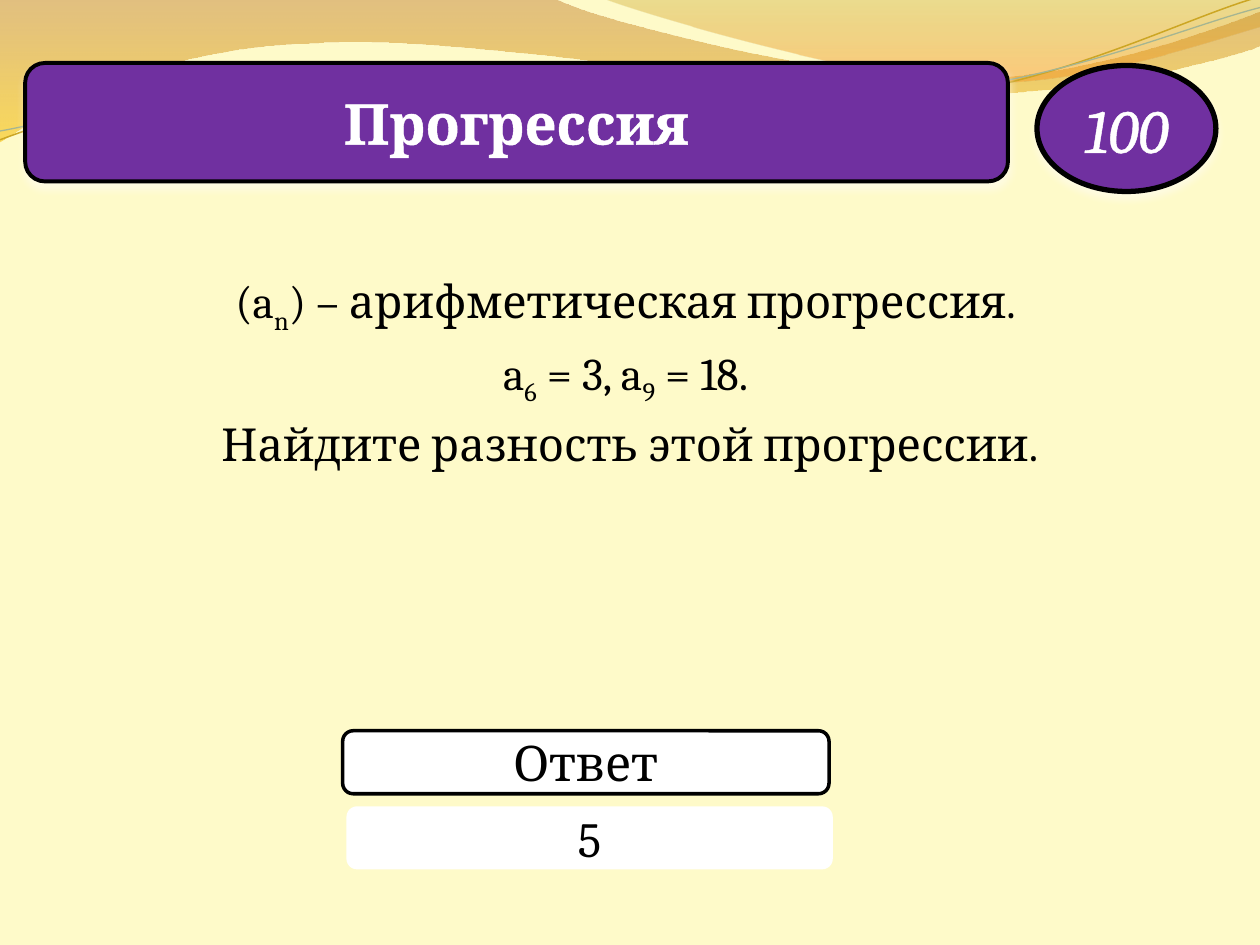
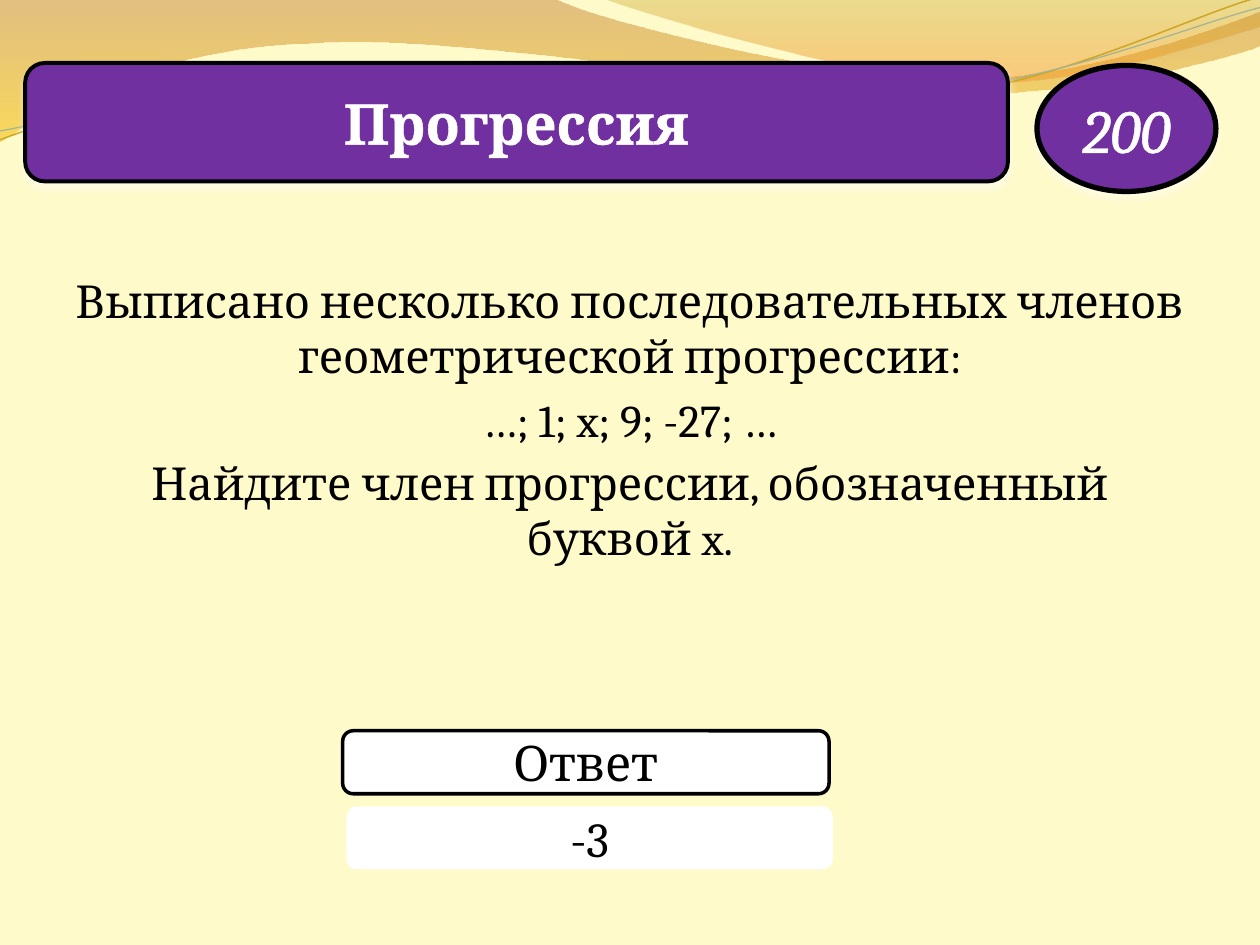
from dataclasses import dataclass
from typing import NamedTuple

from lxml.etree import SubElement
from pptx import Presentation
from pptx.dml.color import RGBColor
from pptx.enum.shapes import MSO_SHAPE
from pptx.enum.text import MSO_ANCHOR, MSO_AUTO_SIZE, PP_ALIGN
from pptx.oxml.ns import qn
from pptx.util import Inches, Pt

FONT = "Cambria"
HUES = {
    "page": "FEFAC9", "band": "7030A0", "white": "FFFFFF", "black": "000000",
    "brown": "C07A28", "gold": "F7BF00", "olive": "C09709",
    "orange": "F59320", "straw": "CCA624", "sage": "A5B592",
}


class Box(NamedTuple):
    left: float
    top: float
    width: float
    height: float

    def sizes(self) -> list:
        return [Inches(side) for side in self]


class Stop(NamedTuple):
    place: float
    hue: str
    alpha: int


@dataclass
class Wave:
    """Each leg is a line end (2 numbers) or a cubic curve (6 numbers)."""
    start: tuple
    legs: list
    stops: tuple = ()
    line: str = ""
    width: float = 0


@dataclass
class Panel:
    """A shape with one line of text."""
    kind: MSO_SHAPE
    box: Box
    size: float
    fill: str = "white"
    line: float = 0
    hue: str = "black"
    bold: bool = False
    slant: bool = False
    edge: float = 0
    shade: bool = False


@dataclass
class Task:
    """Odd parts of a row split at | are subscripts."""
    points: str
    rows: list
    reply: str


BODY = Box(0.5, 2.12, 9, 4.8)
ROUND = MSO_SHAPE.ROUNDED_RECTANGLE
REPLY = Panel(ROUND, Box(2.75, 6.4, 3.86, 0.5), 28)
BAND = Panel(ROUND, Box(0.2, 0.5, 7.8, 0.94), 32, "band", 2.25, "white",
             bold=True, edge=1.45, shade=True)
BADGE = Panel(MSO_SHAPE.OVAL, Box(8.23, 0.52, 1.42, 1), 35, "band", 3,
              "white", slant=True, edge=0.75, shade=True)
BUTTON = Panel(ROUND, Box(2.72, 5.8, 3.86, 0.5), 28, line=2)

WAVES = [
    Wave((0, 0), [
        (4.4, -0.01),
        (4.76, 0.17, 6.64, 0.63, 7.58, 0.63),
        (8.53, 0.63, 9.58, 0.26, 10, 0.09),
        (10.01, 0.36),
        (9.83, 0.44, 8.7, 0.76, 7.46, 0.75),
        (6.22, 0.75, 3.82, 0.28, 2.57, 0.34),
        (1.29, 0.36, 0.46, 0.83, -0.01, 1.13),
        (0, 0),
    ], stops=(Stop(0, "brown", 45), Stop(1, "gold", 55))),
    Wave((4.79, -0.01), [
        (5.09, 0.11, 6.82, 0.62, 7.69, 0.65),
        (8.56, 0.69, 9.61, 0.32, 10, 0.21),
        (10, 0),
        (4.79, -0.01),
    ], stops=(Stop(0, "olive", 30), Stop(0.8, "orange", 45))),
    Wave((0, 1.11), [
        (0.48, 0.93, 1.58, 0.57, 2.77, 0.52),
        (3.95, 0.47, 5.93, 0.89, 7.13, 0.8),
        (8.33, 0.71, 9.38, 0.15, 9.98, -0.02),
    ], line="straw", width=0.85),
    Wave((0, 1.04), [
        (0.47, 0.96, 1.64, 0.61, 2.83, 0.56),
        (4.03, 0.51, 5.97, 0.84, 7.17, 0.75),
        (8.36, 0.67, 9.41, 0.21, 10, 0.06),
    ], line="sage", width=0.75),
]

TASKS = [
    Task("100", [
        "(a|n|) – арифметическая прогрессия. ",
        "a|6| = 3, a|9| = 18. ",
        "Найдите разность этой прогрессии.",
    ], "5"),
    Task("200", [
        "Выписано несколько последовательных членов геометрической прогрессии:",
        "…; 1; x; 9; -27; …",
        "Найдите член прогрессии, обозначенный буквой x.",
    ], "-3"),
]


def tint(hue: str) -> RGBColor:
    return RGBColor.from_string(HUES[hue])


def bend(shape, legs: list) -> None:
    """Join each three straight steps of a cubic leg into one curve."""
    steps = list(shape.element.iter(qn("a:lnTo")))
    for leg in legs:
        count = len(leg) // 2
        group, steps = steps[:count], steps[count:]
        if count == 3:
            curve = group[0].makeelement(qn("a:cubicBezTo"))
            group[0].addprevious(curve)
            for step in group:
                curve.append(step[0])
                step.getparent().remove(step)


def draw_wave(slide, wave: Wave):
    dots = [(Inches(x), Inches(y)) for leg in wave.legs
            for x, y in zip(leg[::2], leg[1::2])]
    pen = slide.shapes.build_freeform(*[Inches(n) for n in wave.start])
    pen.add_line_segments(dots, close=bool(wave.stops))
    shape = pen.convert_to_shape()
    bend(shape, wave.legs)
    shape.shadow.inherit = False
    if wave.stops:
        shape.line.fill.background()
        shape.fill.gradient()
        shape.fill.gradient_angle = 270
        for mark, stop in zip(shape.fill.gradient_stops, wave.stops):
            mark.position = stop.place
            mark.color.rgb = tint(stop.hue)
        for hue, stop in zip(shape.element.iter(qn("a:srgbClr")), wave.stops):
            SubElement(hue, qn("a:alpha"), val=str(stop.alpha * 1000))
    else:
        shape.fill.background()
        shape.line.color.rgb = tint(wave.line)
        shape.line.width = Pt(wave.width)
    return shape


def style(para, size: float, hue: str = "black", bold: bool = False,
          slant: bool = False) -> None:
    para.alignment = PP_ALIGN.CENTER
    font = para.font
    font.name, font.size = FONT, Pt(size)
    font.bold, font.italic = bold, slant
    font.color.rgb = tint(hue)


def cast(shape) -> None:
    """Add a soft light shadow below a shape."""
    glow = SubElement(shape.element.spPr.find(qn("a:effectLst")),
                      qn("a:outerShdw"), blurRad=str(Pt(4.5)),
                      dist=str(Pt(3)), dir="5400000", rotWithShape="0")
    hue = SubElement(glow, qn("a:srgbClr"), val=HUES["white"])
    SubElement(hue, qn("a:alpha"), val="48000")


def draw_panel(slide, panel: Panel, text: str) -> None:
    shape = slide.shapes.add_shape(panel.kind, *panel.box.sizes())
    shape.shadow.inherit = False
    shape.fill.solid()
    shape.fill.fore_color.rgb = tint(panel.fill)
    if panel.line:
        shape.line.color.rgb = tint("black")
        shape.line.width = Pt(panel.line)
    else:
        shape.line.fill.background()
    if panel.shade:
        cast(shape)

    frame = shape.text_frame
    frame.word_wrap = True
    frame.vertical_anchor = MSO_ANCHOR.MIDDLE
    para = frame.paragraphs[0]
    style(para, panel.size, panel.hue, panel.bold, panel.slant)
    run = para.add_run()
    run.text = text
    if panel.edge:
        edge = SubElement(run._r.get_or_add_rPr(), qn("a:ln"),
                          w=str(Pt(panel.edge)))
        paint = SubElement(edge, qn("a:solidFill"))
        SubElement(paint, qn("a:srgbClr"), val=HUES[panel.hue])


def fill_body(body, rows: list) -> None:
    body.left, body.top, body.width, body.height = BODY.sizes()
    frame = body.text_frame
    frame.auto_size = MSO_AUTO_SIZE.NONE
    frame.margin_left = frame.margin_right = Inches(0.08)
    for n, row in enumerate(rows):
        para = frame.add_paragraph() if n else frame.paragraphs[0]
        props = para._p.get_or_add_pPr()
        props.set("marL", "0")
        props.set("indent", "0")
        if not n:
            para.space_before = Pt(0)
        SubElement(props, qn("a:buNone"))
        style(para, 26)
        for part, text in enumerate(row.split("|")):
            run = para.add_run()
            run.text = text
            if part % 2:
                run._r.get_or_add_rPr().set("baseline", "-25000")


def share(slide, layout) -> None:
    """Put the page colour and the waves on the layout."""
    layout.background.fill.solid()
    layout.background.fill.fore_color.rgb = tint("page")
    for n, wave in enumerate(WAVES, 20):
        part = draw_wave(slide, wave).element
        part.nvSpPr.cNvPr.set("id", str(n))
        layout.shapes.element.append(part)


def fill_slide(slide, task: Task) -> None:
    # The band holds the heading, so the title holder goes
    title = slide.shapes.title.element
    title.getparent().remove(title)
    fill_body(slide.placeholders[1], task.rows)

    # Answer, heading, points and button
    for panel, text in ((REPLY, task.reply), (BAND, "Прогрессия"),
                        (BADGE, task.points), (BUTTON, "Ответ")):
        draw_panel(slide, panel, text)


def main() -> None:
    deck = Presentation()
    deck.slide_width, deck.slide_height = Inches(10), Inches(7.5)
    layout = deck.slide_layouts[1]
    slides = [deck.slides.add_slide(layout) for _ in TASKS]
    share(slides[0], layout)
    for slide, task in zip(slides, TASKS):
        fill_slide(slide, task)
    deck.save("out.pptx")


if __name__ == "__main__":
    main()
